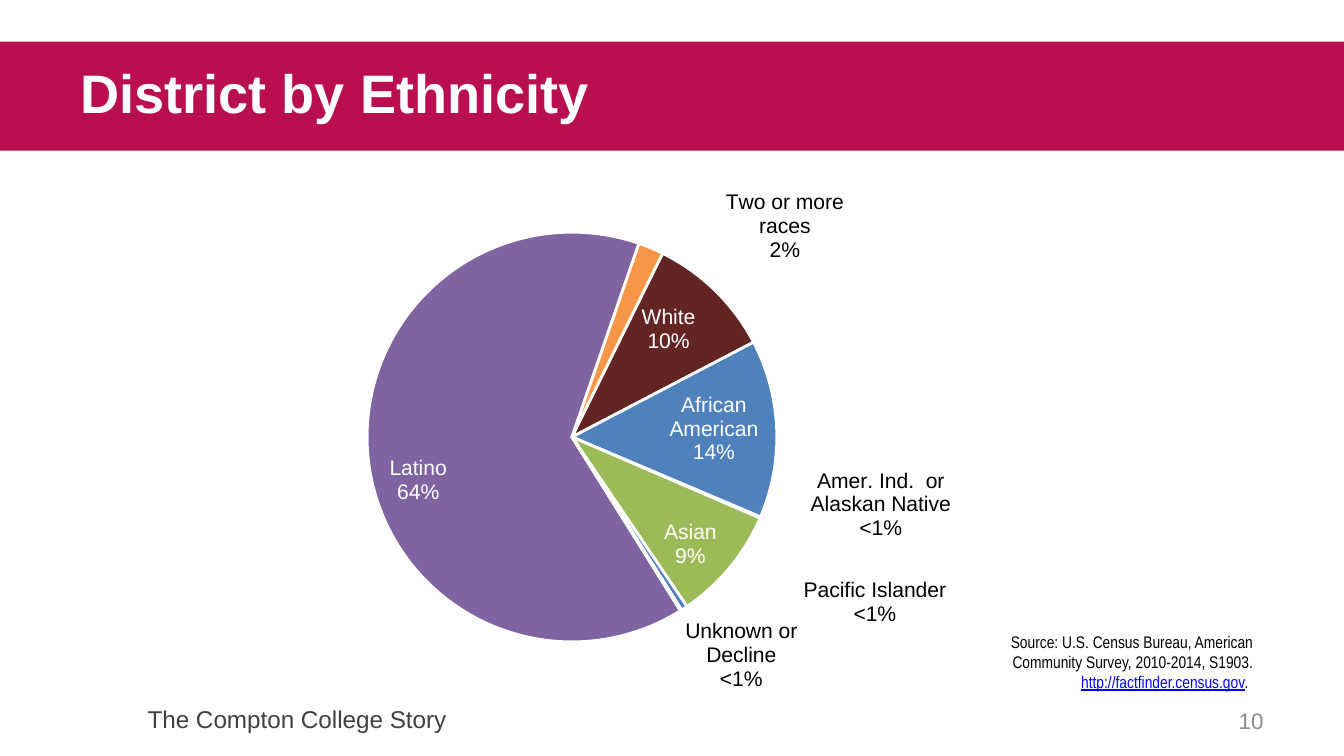
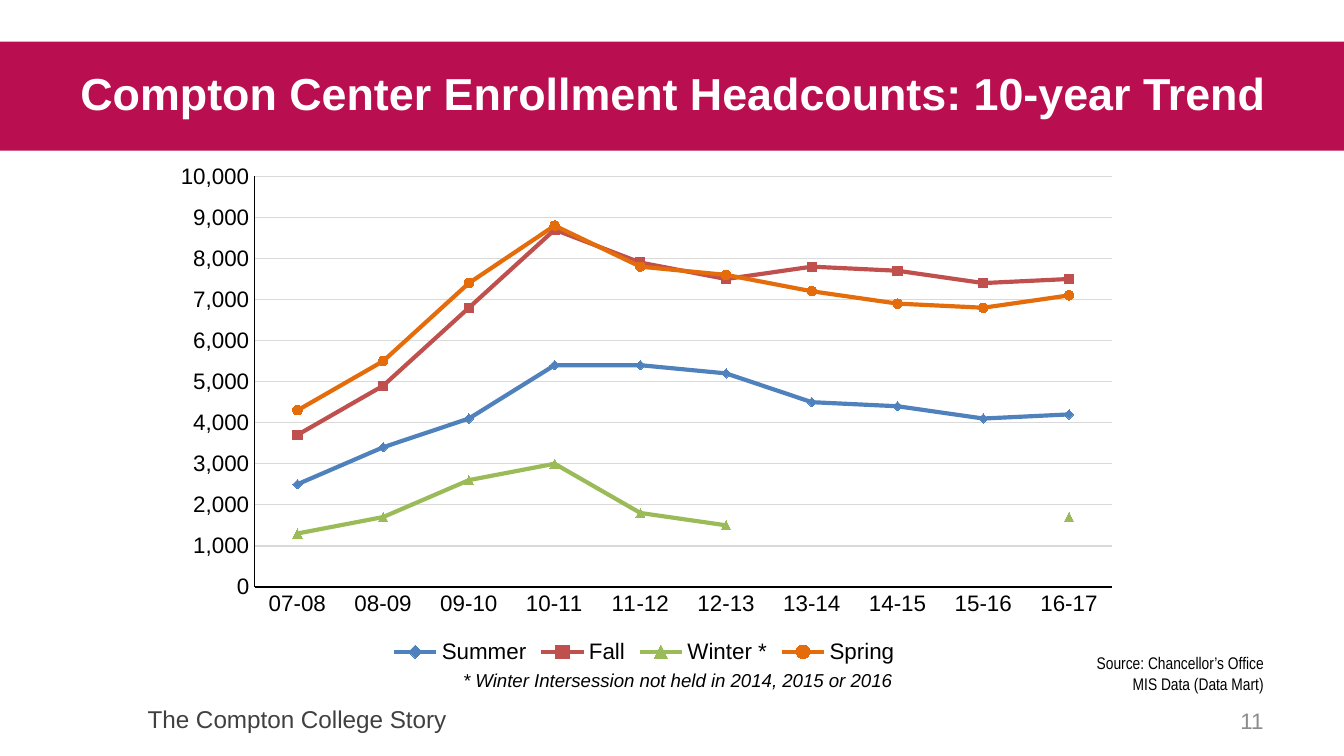
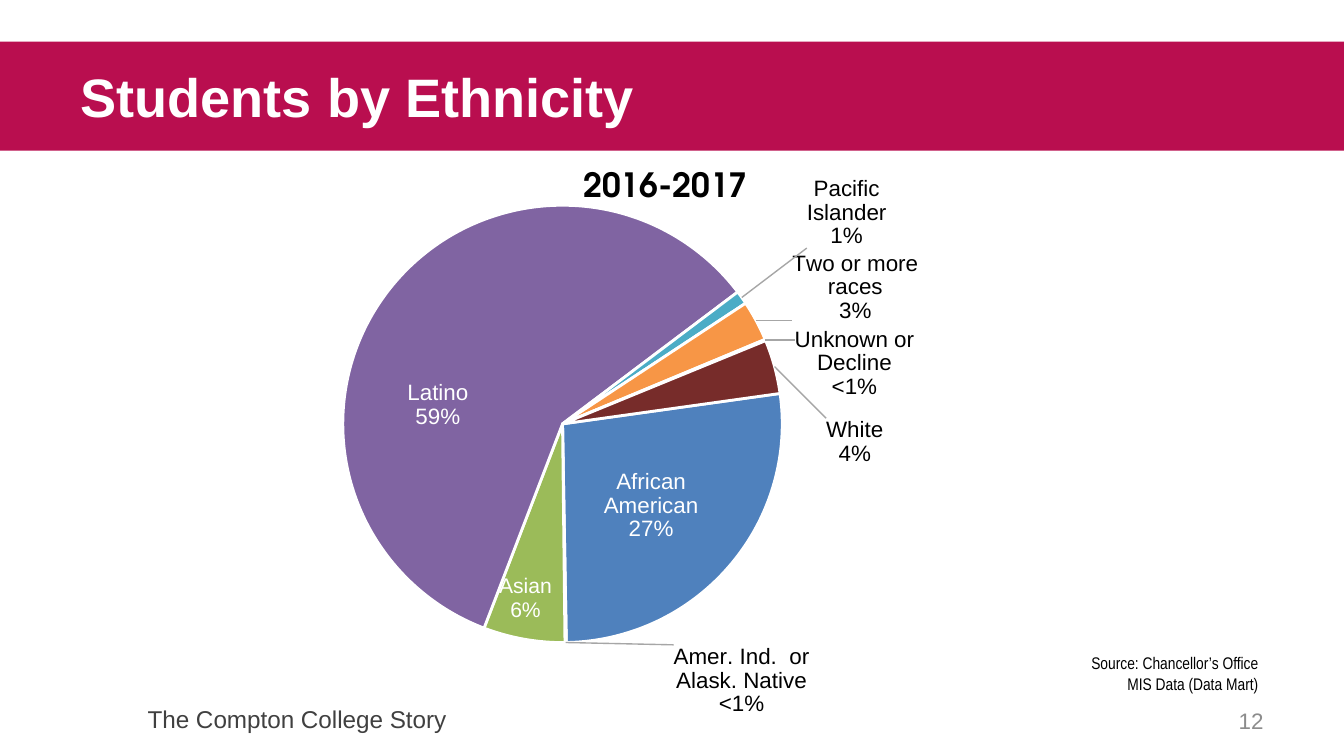
from pptx import Presentation
from pptx.chart.data import CategoryChartData
from pptx.dml.color import RGBColor
from pptx.enum.chart import XL_CHART_TYPE, XL_LEGEND_POSITION, XL_MARKER_STYLE, XL_TICK_MARK
from pptx.enum.shapes import MSO_SHAPE
from pptx.enum.text import MSO_ANCHOR, PP_ALIGN
from pptx.oxml import parse_xml
from pptx.oxml.ns import nsdecls
from pptx.util import Pt

PIE, LINE = XL_CHART_TYPE.PIE, XL_CHART_TYPE.LINE_MARKERS
BOTTOM = XL_LEGEND_POSITION.BOTTOM
NO_TICK = XL_TICK_MARK.NONE
DIAMOND, SQUARE = XL_MARKER_STYLE.DIAMOND, XL_MARKER_STYLE.SQUARE
TRIANGLE, CIRCLE = XL_MARKER_STYLE.TRIANGLE, XL_MARKER_STYLE.CIRCLE
RECTANGLE = MSO_SHAPE.RECTANGLE
TOP, MIDDLE = MSO_ANCHOR.TOP, MSO_ANCHOR.MIDDLE
LEFT, CENTER, RIGHT = PP_ALIGN.LEFT, PP_ALIGN.CENTER, PP_ALIGN.RIGHT

CRIMSON = RGBColor(0xB9, 0x0E, 0x4F)
WHITE = RGBColor(0xFF, 0xFF, 0xFF)
BLACK = RGBColor(0x00, 0x00, 0x00)
CHARCOAL = RGBColor(0x40, 0x40, 0x40)
GREY = RGBColor(0x8C, 0x8C, 0x8C)
GRID_GREY = RGBColor(0xD9, 0xD9, 0xD9)
LEADER_GREY = RGBColor(0xA6, 0xA6, 0xA6)
LINK_BLUE = RGBColor(0x00, 0x00, 0xFF)
BLUE = RGBColor(0x4F, 0x81, 0xBD)
RED = RGBColor(0xC0, 0x50, 0x4D)
GREEN = RGBColor(0x9B, 0xBB, 0x59)
PURPLE = RGBColor(0x80, 0x64, 0xA2)
TEAL = RGBColor(0x4B, 0xAC, 0xC6)
ORANGE = RGBColor(0xF7, 0x96, 0x46)
DARK_ORANGE = RGBColor(0xE4, 0x6C, 0x0A)
MAROON = RGBColor(0x63, 0x25, 0x23)
BRICK = RGBColor(0x77, 0x2C, 0x2A)
NAVY = RGBColor(0x2C, 0x4D, 0x75)

SANS, NARROW, DISPLAY = "Arial", "Arial Narrow", "TeX Gyre Adventor"
EDGES = '<c:xMode val="edge"/><c:yMode val="edge"/>'
INNER = '<c:layoutTarget val="inner"/>' + EDGES


def place(element, index, values, modes=""):
    """Give a chart element a manual layout as its child at the index."""
    for old in element.xpath("c:layout"):
        element.remove(old)
    body = "".join(f'<c:{tag} val="{value}"/>' for tag, value in zip("xywh", values))
    element.insert(index, parse_xml(f'<c:layout {nsdecls("c")}><c:manualLayout>{modes}{body}'
                                    "</c:manualLayout></c:layout>"))


def break_lines(element):
    """Put a line break between the category and the percentage."""
    return element.append(parse_xml(f'<c:separator {nsdecls("c")}>\n</c:separator>'))


def style_font(font, size, color, name=SANS, bold=False, italic=False):
    """Apply one text style to a font."""
    font.size, font.name = Pt(size), name
    font.bold, font.italic = bold, italic
    font.color.rgb = color


class Deck:
    """Holds the presentation style and the current slide."""

    def __init__(self):
        """Start an empty widescreen presentation."""
        self.presentation = Presentation()
        self.presentation.slide_width = Pt(720)
        self.presentation.slide_height = Pt(405)
        self.slide = None

    def new_slide(self, title, number, title_box, title_size=29):
        """Add a slide with the shared band, title, footer and number."""
        self.slide = self.presentation.slides.add_slide(self.presentation.slide_layouts[6])
        self.text((72, 373.7, 396, 21.6), ["The Compton College Story"], 13, CHARCOAL)
        band = self.slide.shapes.add_shape(RECTANGLE, 0, Pt(22.4), Pt(720), Pt(58.4))
        band.shadow.inherit = False
        band.fill.solid()
        band.fill.fore_color.rgb = CRIMSON
        band.line.fill.background()
        self.text(title_box, [title], title_size, WHITE, anchor=MIDDLE, bold=True)
        self.text((516.2, 375.1, 167.8, 21.6), [str(number)], 12, GREY,
                  align=RIGHT, anchor=MIDDLE)

    def text(self, box, lines, size, color, name=SANS, align=LEFT, anchor=TOP,
             bold=False, italic=False):
        """Add a wrapped text box and return its last paragraph."""
        frame = self.slide.shapes.add_textbox(*map(Pt, box)).text_frame
        frame.word_wrap = True
        frame.vertical_anchor = anchor
        frame.text = "\n".join(lines)
        for paragraph in frame.paragraphs:
            paragraph.alignment = align
            style_font(paragraph.font, size, color, name, bold, italic)
        return paragraph

    def source(self, box, lines):
        """Add a right-aligned source note."""
        return self.text(box, lines, 9, BLACK, NARROW, RIGHT)

    def chart(self, kind, box, categories, series, plot_box):
        """Add a chart with the base font and a fixed plot area."""
        data = CategoryChartData(number_format="#,##0")
        data.categories = categories
        for name, values in series:
            data.add_series(name, values)
        chart = self.slide.shapes.add_chart(kind, *map(Pt, box), data).chart
        style_font(chart.font, 12, BLACK)
        chart.has_title = chart.has_legend = False
        place(chart.plots[0]._element.getparent(), 0, plot_box, INNER)
        return chart

    def pie(self, box, plot_box, start, slices, leaders=False):
        """Add a pie whose slices carry colour, label style and label offset."""
        chart = self.chart(PIE, box, [part[0] for part in slices],
                           [("Series 1", [part[1] for part in slices])], plot_box)
        plot = chart.plots[0]
        plot.vary_by_categories = True
        plot._element.append(parse_xml(f'<c:firstSliceAng {nsdecls("c")} val="{start}"/>'))
        ethnicity = plot.series[0]
        labels = ethnicity.data_labels
        labels.show_value = False
        labels.show_percentage = labels.show_category_name = True
        labels.number_format, labels.number_format_is_linked = "0%", False
        style_font(labels.font, 12, CHARCOAL)
        for index, (group, share, color, ink, size, offset) in enumerate(slices):
            point = ethnicity.points[index]
            point.format.fill.solid()
            point.format.fill.fore_color.rgb = color
            point.format.line.color.rgb = WHITE
            point.format.line.width = Pt(1.5)
            wording = f"{group}\n<1%" if share < 1 else None
            self.slice_label(ethnicity, index, wording, ink, size, offset)
        settings = ethnicity._element.xpath("c:dLbls")[0]
        for old in settings.xpath("c:separator | c:showLeaderLines | c:leaderLines"):
            settings.remove(old)
        break_lines(settings)
        settings.append(parse_xml(f'<c:showLeaderLines {nsdecls("c")} val="{int(leaders)}"/>'))
        if leaders:
            settings.append(parse_xml(
                f'<c:leaderLines {nsdecls("c", "a")}><c:spPr><a:ln w="{Pt(0.75)}"><a:solidFill>'
                f'<a:srgbClr val="{LEADER_GREY}"/></a:solidFill></a:ln></c:spPr>'
                "</c:leaderLines>"))
        return chart

    def slice_label(self, series, index, wording, ink, size, offset):
        """Style and shift one slice label, with its own wording if any."""
        label = series.points[index].data_label
        if wording:
            label.text_frame.text = wording
            for paragraph in label.text_frame.paragraphs:
                for run in paragraph.runs:
                    style_font(run.font, size, ink)
        else:
            style_font(label.font, size, ink)
        element = series._element.xpath(f'c:dLbls/c:dLbl[c:idx/@val="{index}"]')[0]
        place(element, 1, offset)
        for flag, value in (("showVal", "0"), ("showCatName", "1"), ("showPercent", "1")):
            element.xpath(f"c:{flag}")[0].set("val", value)
        break_lines(element)

    def trend(self, box, plot_box, categories, terms):
        """Add a line chart with markers, one line per term."""
        chart = self.chart(LINE, box, categories, [term[:2] for term in terms], plot_box)
        chart.has_legend = True
        chart.legend.position = BOTTOM
        chart.legend.include_in_layout = False
        style_font(chart.legend.font, 12, BLACK)
        for axis in (chart.category_axis, chart.value_axis):
            axis.major_tick_mark = axis.minor_tick_mark = NO_TICK
            style_font(axis.tick_labels.font, 12, BLACK)
            axis.format.line.color.rgb = BLACK
            axis.format.line.width = Pt(0.75)
        counts = chart.value_axis
        counts.minimum_scale, counts.maximum_scale, counts.major_unit = 0, 10000, 1000
        counts.tick_labels.number_format = "#,##0"
        counts.tick_labels.number_format_is_linked = False
        counts.has_major_gridlines = True
        counts.major_gridlines.format.line.color.rgb = GRID_GREY
        counts.major_gridlines.format.line.width = Pt(0.75)
        chart.plots[0].vary_by_categories = False
        for series, (_, _, color, marker) in zip(chart.plots[0].series, terms):
            series.smooth = False
            series.format.line.color.rgb = color
            series.format.line.width = Pt(2.25)
            series.marker.style, series.marker.size = marker, 5
            series.marker.format.fill.solid()
            series.marker.format.fill.fore_color.rgb = color
            series.marker.format.line.color.rgb = color


def district_slide(deck):
    """Build the district ethnicity slide."""
    deck.new_slide("District by Ethnicity", 10, (36, 22.4, 567.4, 54))
    small = 11.3
    deck.pie((162, 90, 385.2, 280), (0.09, 0.12, 0.57, 0.79), 148, [
        ("Latino", 64, PURPLE, WHITE, small, (0.12, -0.01)),
        ("Two or more races", 2, ORANGE, BLACK, small, (0.1, 0.04)),
        ("White", 10, MAROON, WHITE, small, (-0.11, 0.13)),
        ("African American", 14, BLUE, WHITE, small, (-0.16, 0)),
        ("Amer. Ind.  or Alaskan Native", 0.1, TEAL, BLACK, small, (0.06, -0.1)),
        ("Asian", 9, GREEN, WHITE, small, (-0.1, -0.1)),
        ("Pacific Islander", 0.5, BLUE, BLACK, small, (0.16, -0.07)),
        ("Unknown or Decline", 0.1, RED, BLACK, small, (0, 0.01)),
    ])
    citation = deck.source((516.2, 334.8, 162, 40.3), [
        "Source: U.S. Census Bureau, American Community Survey, 2010-2014, S1903. "])
    address = citation.add_run()
    address.text = "http://factfinder.census.gov"
    address.font.color.rgb = LINK_BLUE
    address.font.underline = True
    stop = citation.add_run()
    stop.text = ". "
    stop.font.italic = True


def enrollment_slide(deck):
    """Build the ten-year enrollment slide."""
    deck.new_slide("Compton Center Enrollment Headcounts: 10-year Trend", 11,
                   (36, 10.8, 684, 77.8), 24)
    deck.source((437.8, 346.3, 246.2, 28.8),
                ["Source: Chancellor’s Office", "MIS Data (Data Mart)"])
    deck.text((131.8, 355, 462.2, 19.4),
              ["* Winter Intersession not held in 2014, 2015 or 2016"], 10, BLACK,
              align=CENTER, italic=True)
    years = [f"{year:02}-{year + 1:02}" for year in range(7, 17)]
    deck.trend((84.2, 83.5, 522, 275), (0.1, 0.04, 0.88, 0.8), years, [
        ("Summer", [2500, 3400, 4100, 5400, 5400, 5200, 4500, 4400, 4100, 4200], BLUE, DIAMOND),
        ("Fall", [3700, 4900, 6800, 8700, 7900, 7500, 7800, 7700, 7400, 7500], RED, SQUARE),
        ("Winter *", [1300, 1700, 2600, 3000, 1800, 1500, None, None, None, 1700], GREEN,
         TRIANGLE),
        ("Spring", [4300, 5500, 7400, 8800, 7800, 7600, 7200, 6900, 6800, 7100], DARK_ORANGE,
         CIRCLE),
    ])


def students_slide(deck):
    """Build the student ethnicity slide."""
    deck.new_slide("Students by Ethnicity", 12, (36, 22.4, 567.4, 58.4))
    deck.source((558, 346.3, 123.1, 28.8), ["Source: Chancellor’s Office\vMIS Data (Data Mart)"])
    chart = deck.pie((156.2, 84.2, 392.4, 302.4), (0.07, 0.08, 0.6, 0.79), 82, [
        ("African American", 27, BLUE, WHITE, 12, (-0.18, -0.18)),
        ("Amer. Ind.  or Alask. Native", 0.1, RED, BLACK, 12, (0.24, -0.01)),
        ("Asian", 6, GREEN, WHITE, 11.3, (0.04, -0.13)),
        ("Latino", 59, PURPLE, WHITE, 12, (0.12, 0.25)),
        ("Pacific Islander", 1, TEAL, BLACK, 12, (0.08, -0.08)),
        ("Two or more races", 3, ORANGE, BLACK, 12, (0.04, 0.01)),
        ("Unknown or Decline", 0.1, NAVY, BLACK, 12, (0.03, 0.11)),
        ("White", 4, BRICK, BLACK, 12, (0.06, 0.18)),
    ], leaders=True)
    chart.has_title = True
    heading = chart.chart_title
    heading.text_frame.text = "2016-2017"
    style_font(heading.text_frame.paragraphs[0].font, 18, BLACK, DISPLAY, bold=True)
    place(heading._element, 1, (0.39, 0.01), EDGES)


def main():
    """Build and save the presentation."""
    deck = Deck()
    district_slide(deck)
    enrollment_slide(deck)
    students_slide(deck)
    deck.presentation.save("out.pptx")


if __name__ == "__main__":
    main()
